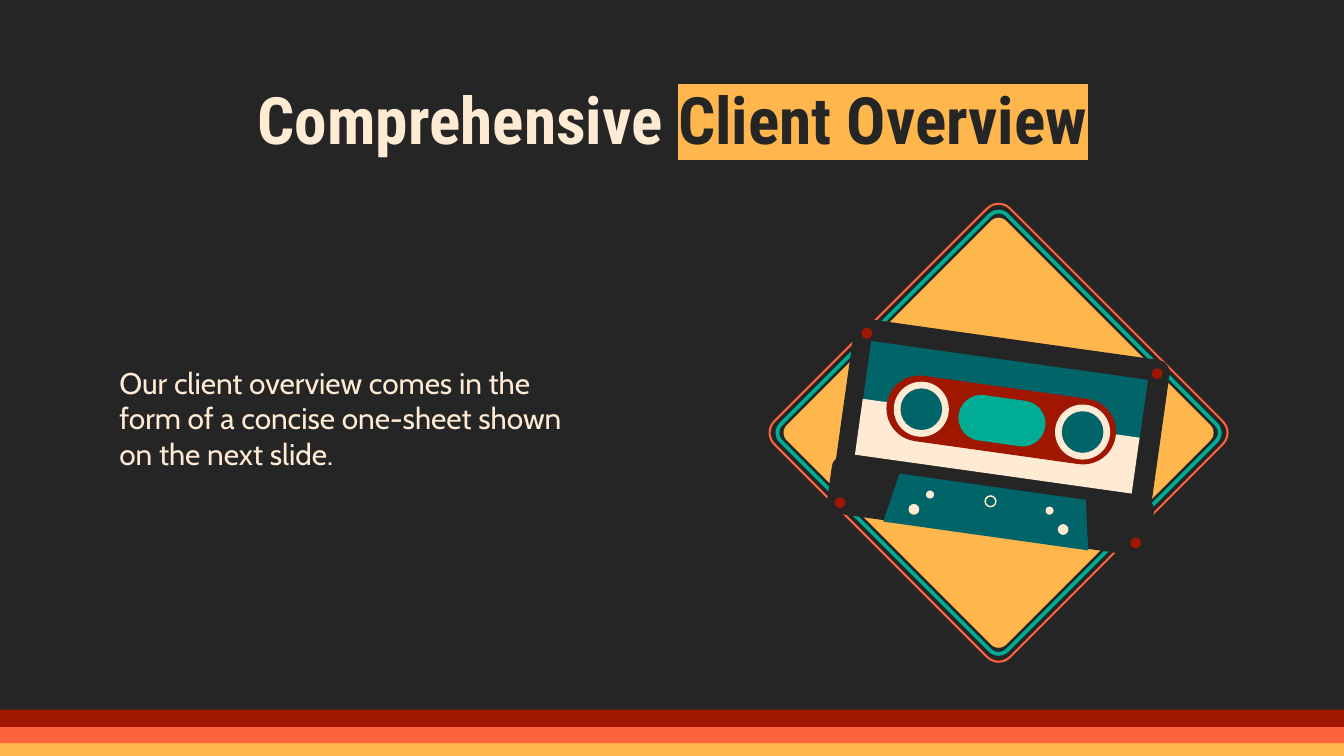
from typing import NamedTuple, Optional

from lxml import etree
from pptx import Presentation
from pptx.dml.color import RGBColor
from pptx.enum import shapes, text
from pptx.oxml.ns import qn
from pptx.util import Inches, Pt

COLORS = {
    "dark": "252526",
    "cream": "FFEBD4",
    "pale": "FFE9C5",
    "amber": "FFB74D",
    "orange": "FF633E",
    "red": "9F1700",
    "teal": "006469",
    "mint": "00AC93",
}
KIND = shapes.MSO_SHAPE
TILT = 8  # degrees the cassette leans


class Part(NamedTuple):
    kind: shapes.MSO_SHAPE
    left: float
    top: float
    width: float
    height: float
    fill: Optional[str] = None
    rotation: float = 0
    adjustment: Optional[float] = None
    line: Optional[str] = None
    line_width: float = 1


def color(name: str) -> RGBColor:
    return RGBColor.from_string(COLORS[name])


def draw(slide, part: Part) -> None:
    shape = slide.shapes.add_shape(
        part.kind, Inches(part.left), Inches(part.top), Inches(part.width), Inches(part.height))
    shape.shadow.inherit = False
    shape.rotation = part.rotation
    if part.adjustment is not None:
        shape.adjustments[0] = part.adjustment
    if part.fill:
        shape.fill.solid()
        shape.fill.fore_color.rgb = color(part.fill)
    else:
        shape.fill.background()
    if part.line:
        shape.line.color.rgb = color(part.line)
        shape.line.width = Pt(part.line_width)
    else:
        shape.line.fill.background()


def diamond(side: float, radius: float, **style) -> Part:
    center_x, center_y = 7.43, 3.22
    return Part(KIND.ROUNDED_RECTANGLE, center_x - side / 2, center_y - side / 2, side, side,
                rotation=45, adjustment=radius / side, **style)


def dot(left: float, top: float, size: float, fill: str) -> Part:
    return Part(KIND.OVAL, left, top, size, size, fill)


def add_text(slide, left: float, top: float, width: float, height: float):
    frame = slide.shapes.add_textbox(
        Inches(left), Inches(top), Inches(width), Inches(height)).text_frame
    frame.word_wrap = True
    frame.margin_left = frame.margin_right = Inches(0.1)
    frame.margin_top = frame.margin_bottom = Inches(0.1)
    return frame


def style_run(run, font: str, size: float, name: str, bold: bool = False) -> None:
    run.font.name = font
    run.font.size = Pt(size)
    run.font.bold = bold
    run.font.color.rgb = color(name)


def highlight(run, name: str) -> None:
    mark = etree.Element(qn("a:highlight"))
    etree.SubElement(mark, qn("a:srgbClr")).set("val", COLORS[name])
    run.font._element.find(qn("a:solidFill")).addnext(mark)


STRIPES = [Part(KIND.RECTANGLE, -0.01, top, 10.01, 0.13, fill)
           for top, fill in ((5.51, "amber"), (5.4, "orange"), (5.28, "red"))]

DIAMONDS = [
    diamond(2.31, 0.08, fill="amber"),
    diamond(2.38, 0.09, line="mint", line_width=2),
    diamond(2.48, 0.12, line="orange", line_width=1.1),
]

CASSETTE = [
    # Body, with a wider foot
    Part(KIND.ROUNDED_RECTANGLE, 6.26, 2.52, 2.37, 1.4, "dark", TILT, 0.07),
    Part(KIND.ROUNDED_RECTANGLE, 6.16, 3.55, 2.42, 0.43, "dark", TILT, 0.2),
    # Label and tape opening
    Part(KIND.RECTANGLE, 6.44, 2.68, 2.08, 0.46, "teal", TILT),
    Part(KIND.RECTANGLE, 6.38, 3.11, 2.08, 0.42, "cream", TILT),
    Part(KIND.TRAPEZOID, 6.59, 3.62, 1.54, 0.37, "teal", TILT, 0.19),
    # Corner screws
    *(dot(left, top, 0.08, "red")
      for left, top in ((6.41, 2.44), (8.57, 2.74), (6.21, 3.7), (8.41, 4))),
    # Holes in the opening
    *(dot(left, top, size, "cream") for left, top, size in (
        (6.76, 3.75, 0.08), (6.89, 3.65, 0.06), (7.87, 3.9, 0.08), (7.78, 3.77, 0.06))),
    Part(KIND.OVAL, 7.33, 3.69, 0.08, 0.08, line="pale", line_width=0.8),
    # Reels and window
    Part(KIND.ROUNDED_RECTANGLE, 6.59, 2.88, 1.72, 0.49, "red", TILT, 0.5),
    *(dot(left + inset, top + inset, 0.41 - 2 * inset, fill)
      for left, top in ((6.65, 2.84), (7.85, 3.01))
      for inset, fill in ((0, "cream"), (0.05, "teal"))),
    Part(KIND.ROUNDED_RECTANGLE, 7.13, 2.96, 0.65, 0.34, "mint", TILT, 0.5),
]


def main() -> None:
    presentation = Presentation()
    # Widescreen, 16 to 9
    presentation.slide_width = Inches(10)
    presentation.slide_height = Inches(10) * 9 // 16
    slide = presentation.slides.add_slide(presentation.slide_layouts[6])
    slide.background.fill.solid()
    slide.background.fill.fore_color.rgb = color("dark")

    for part in STRIPES:
        draw(slide, part)

    # Title
    paragraph = add_text(slide, 0.79, 0.49, 8.43, 0.63).paragraphs[0]
    paragraph.alignment = text.PP_ALIGN.CENTER
    for words, name in (("Comprehensive ", "cream"), ("Client Overview", "dark")):
        run = paragraph.add_run()
        run.text = words
        style_run(run, "Roboto Condensed", 35, name, bold=True)
    highlight(paragraph.runs[-1], "amber")

    # Body text, sitting a little above the middle
    frame = add_text(slide, 0.79, 1.53, 3.62, 3.42)
    frame.vertical_anchor = text.MSO_ANCHOR.MIDDLE
    frame.margin_bottom = Inches(0.36)
    frame.text = ("Our client overview comes in the form of a concise one-sheet "
                  "shown on the next slide.")
    style_run(frame.paragraphs[0].runs[0], "Cabin", 16, "cream")

    for part in DIAMONDS + CASSETTE:
        draw(slide, part)

    presentation.save("out.pptx")


if __name__ == "__main__":
    main()
